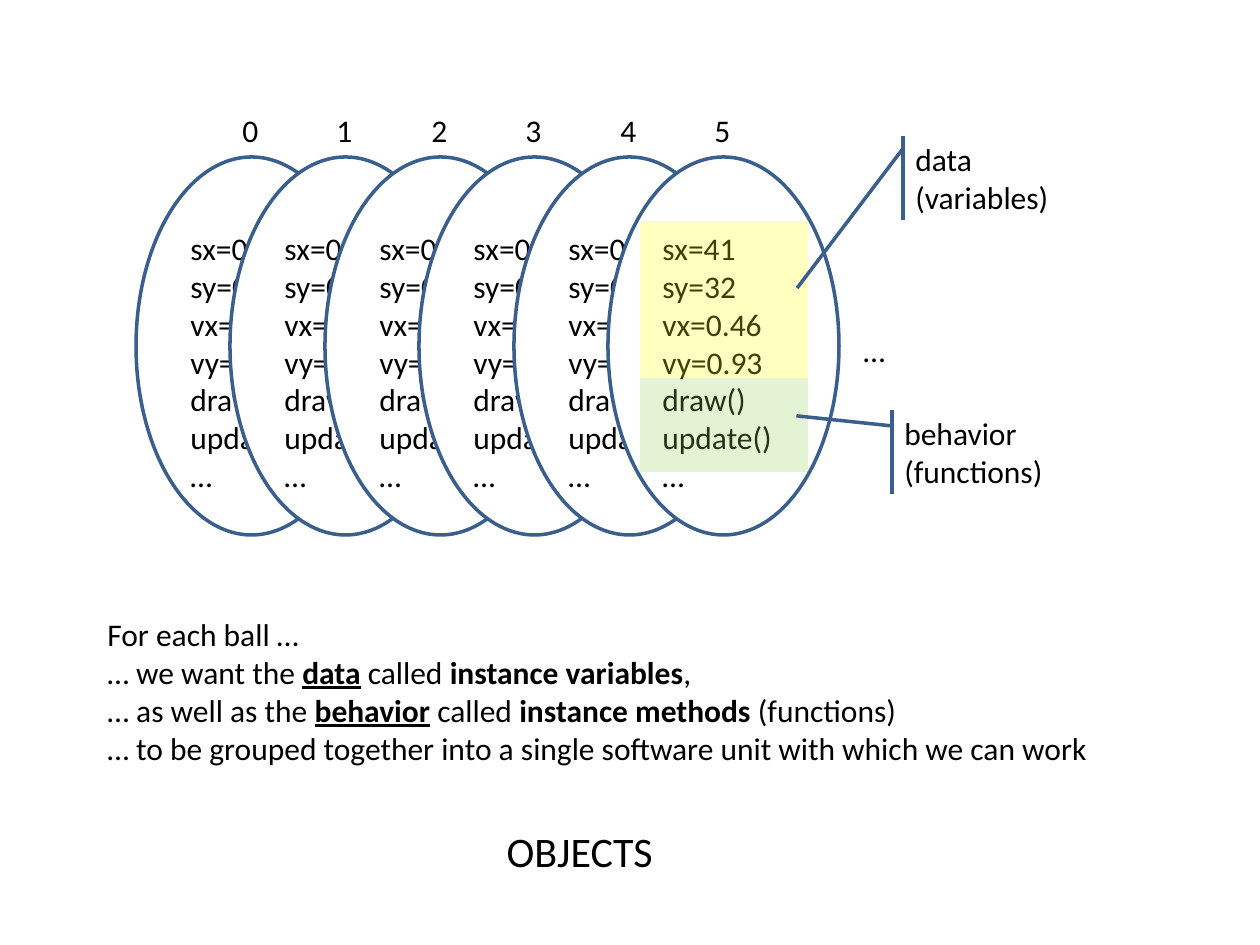
from lxml.etree import SubElement
from pptx import Presentation
from pptx.dml.color import RGBColor
from pptx.enum.shapes import MSO_SHAPE as Preset
from pptx.enum.text import MSO_ANCHOR as Anchor, MSO_AUTO_SIZE as AutoSize, PP_ALIGN as Align
from pptx.oxml.ns import qn
from pptx.util import Emu, Pt

PX = 914400 // 126
COLORS = {"white": "FFFFFF", "black": "000000", "outline": "3A5F8C",
          "data": "FFFF00", "behavior": "92D050"}
BALL_COUNT = 6
BALL_WIDTH = 231
DOUBLE_STEP = 189
METHODS = ["draw()", "update()", "…"]


def color(name):
    return RGBColor.from_string(COLORS[name])


def box(*lengths):
    return [Emu(length * PX) for length in lengths]


def write_text(shape, lines, size=18, wrap=True, anchor=Anchor.TOP, fit=AutoSize.NONE):
    frame = shape.text_frame
    frame.word_wrap = wrap
    frame.vertical_anchor = anchor
    frame.auto_size = fit
    for index, line in enumerate(lines):
        paragraph = frame.add_paragraph() if index else frame.paragraphs[0]
        paragraph.alignment = Align.LEFT
        for part in [line] if isinstance(line, str) else line:
            text, style = (part, "") if isinstance(part, str) else part
            run = paragraph.add_run()
            run.text = text
            run.font.name = "Calibri"
            run.font.size = Pt(size)
            run.font.color.rgb = color("black")
            run.font.bold = "b" in style
            run.font.underline = "u" in style


def add_text(shapes, place, lines, **text_format):
    shape = shapes.add_textbox(*box(*place))
    write_text(shape, lines, fit=AutoSize.SHAPE_TO_FIT_TEXT, **text_format)


def add_outlined(shapes, preset, place):
    shape = shapes.add_shape(preset, *box(*place))
    shape.shadow.inherit = False
    shape.fill.solid()
    shape.fill.fore_color.rgb = color("white")
    shape.line.color.rgb = color("outline")
    shape.line.width = Pt(2)
    return shape


def add_ball(shapes, left, values):
    group = shapes.add_group_shape()
    add_outlined(group.shapes, Preset.OVAL, (left, 157, BALL_WIDTH, 378))
    add_text(group.shapes, (left + 42, 223, 158, 280), values + METHODS)


def add_highlight(shapes, place, fill):
    shape = shapes.add_shape(Preset.RECTANGLE, *box(*place))
    shape.shadow.inherit = False
    shape.line.fill.background()
    shape.fill.solid()
    shape.fill.fore_color.rgb = color(fill)
    rgb = shape.fill._xPr.find(qn("a:solidFill"))[0]
    SubElement(rgb, qn("a:alpha"), val="25000")


def add_callout(shapes, place, lines, adjustments):
    shape = add_outlined(shapes, Preset.LINE_CALLOUT_1_ACCENT_BAR, place)
    for index, value in enumerate(adjustments):
        shape.adjustments[index] = value
    write_text(shape, lines, anchor=Anchor.MIDDLE)


def add_title(slide):
    title = slide.shapes.title
    title.left, title.top, title.width, title.height = box(494, 819, 221, 63)
    write_text(title, ["OBJECTS"], size=24, wrap=False)


def main():
    presentation = Presentation()
    presentation.slide_width, presentation.slide_height = box(1260, 945)
    slide = presentation.slides.add_slide(presentation.slide_layouts[5])
    shapes = slide.shapes
    add_title(slide)

    offsets = [index * DOUBLE_STEP // 2 for index in range(BALL_COUNT)]
    for offset in offsets:
        position = ["sx=41", "sy=32"] if offset == offsets[-1] else ["sx=0.41", "sy=0.32"]
        add_ball(shapes, 136 + offset, position + ["vx=0.46", "vy=0.93"])
    add_text(shapes, (851, 325, 57, 50), ["…"], wrap=False)
    for index, offset in enumerate(offsets):
        add_text(shapes, (230 + offset, 105, 43, 50), [str(index)], wrap=False)

    add_text(shapes, (95, 609, 1124, 165), [
        "For each ball …",
        ["… we want the ", ("data", "bu"), " called ", ("instance variables", "b"), ","],
        ["… as well as the ", ("behavior", "bu"), " called ", ("instance methods ", "b"),
         "(functions)"],
        "… to be grouped together into a single software unit with which we can work",
    ])

    add_highlight(shapes, (640, 221, 168, 157), "data")
    add_highlight(shapes, (640, 378, 168, 94), "behavior")
    add_callout(shapes, (903, 136, 189, 84), ["data", "(variables)"], (0.15, 0, 1.81, -0.56))
    add_callout(shapes, (892, 410, 199, 84), ["behavior", "(functions)"], (0.19, 0, 0.07, -0.48))
    presentation.save("out.pptx")


if __name__ == "__main__":
    main()
